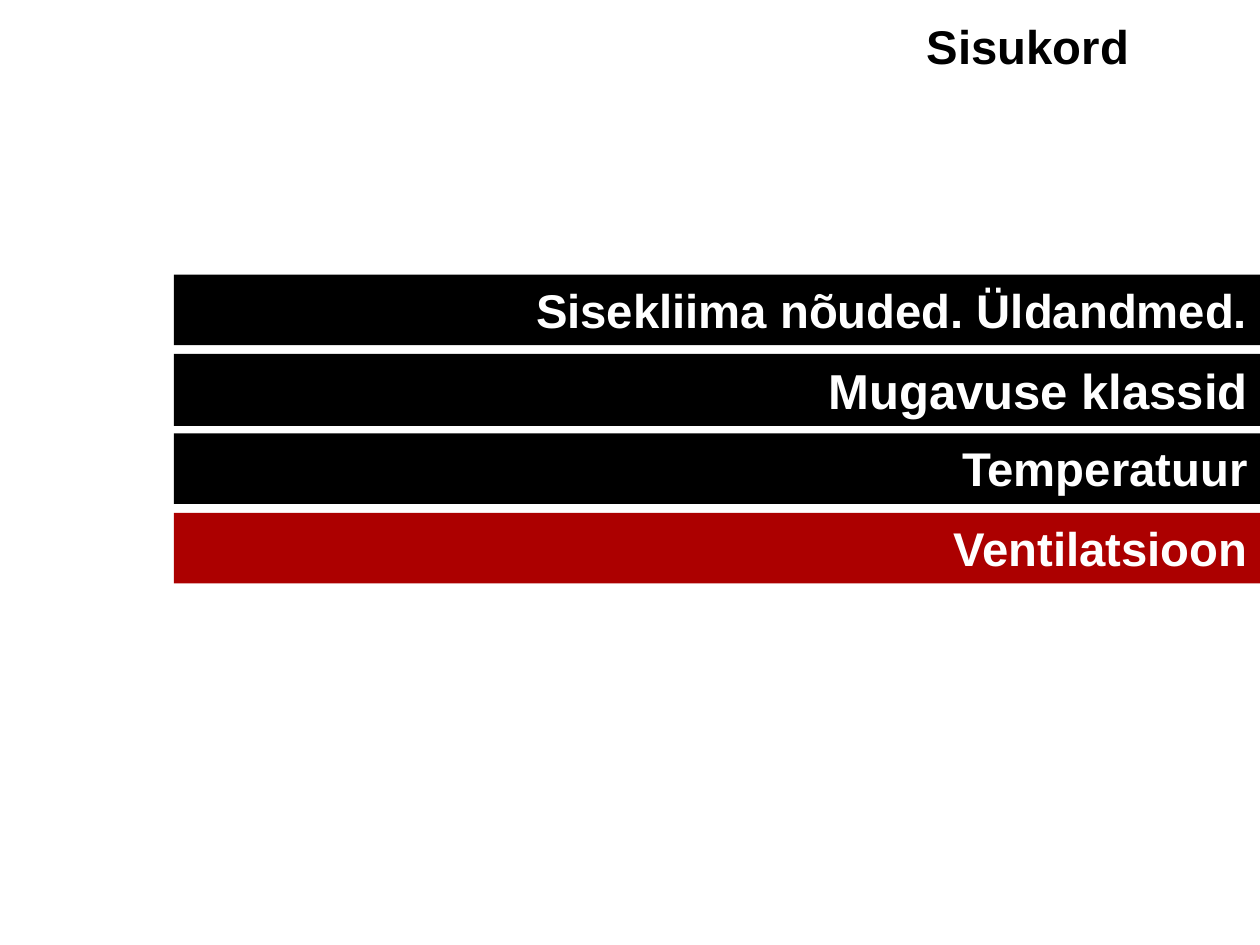
from dataclasses import dataclass

from pptx import Presentation
from pptx.dml.color import RGBColor
from pptx.enum.shapes import MSO_SHAPE
from pptx.enum.text import MSO_ANCHOR, PP_ALIGN
from pptx.util import Inches, Pt

RECTANGLE = MSO_SHAPE.RECTANGLE
TOP, MIDDLE = MSO_ANCHOR.TOP, MSO_ANCHOR.MIDDLE
RIGHT = PP_ALIGN.RIGHT


@dataclass(frozen=True)
class Theme:
    font: str = "Arial"
    black: RGBColor = RGBColor(0, 0, 0)
    white: RGBColor = RGBColor(255, 255, 255)
    current: RGBColor = RGBColor(0xAC, 0, 0)
    size: Pt = Pt(27)
    large: Pt = Pt(28)


theme = Theme()


def write_heading(shape, text, size, color, anchor):
    """Put one bold, right-aligned line into the shape."""
    frame = shape.text_frame
    frame.word_wrap = True
    frame.vertical_anchor = anchor
    para = frame.paragraphs[0]
    para.text = text
    para.alignment = RIGHT
    para.font.name = theme.font
    para.font.size = size
    para.font.bold = True
    para.font.color.rgb = color


deck = Presentation()
deck.slide_width, deck.slide_height = Inches(10), Inches(7.5)
page = deck.slides.add_slide(deck.slide_layouts[6])

title = page.shapes.add_textbox(Inches(1.6), 0, Inches(7.46), Inches(0.72))
write_heading(title, "Sisukord", theme.size, theme.black, MIDDLE)

topics = [
    ("Sisekliima nõuded. Üldandmed.", theme.size, 0.56, theme.black),
    ("Mugavuse klassid", theme.large, 0.57, theme.black),
    ("Temperatuur", theme.size, 0.56, theme.black),
    ("Ventilatsioon", theme.size, 0.56, theme.current),
]
first_top, pitch = 2.18, 0.63

for index, (text, size, height, fill) in enumerate(topics):
    bar = page.shapes.add_shape(
        RECTANGLE, Inches(1.38), Inches(first_top + index * pitch),
        Inches(8.62), Inches(height))
    bar.shadow.inherit = False
    bar.fill.solid()
    bar.fill.fore_color.rgb = fill
    bar.line.fill.background()
    write_heading(bar, text, size, theme.white, TOP)

deck.save("out.pptx")
